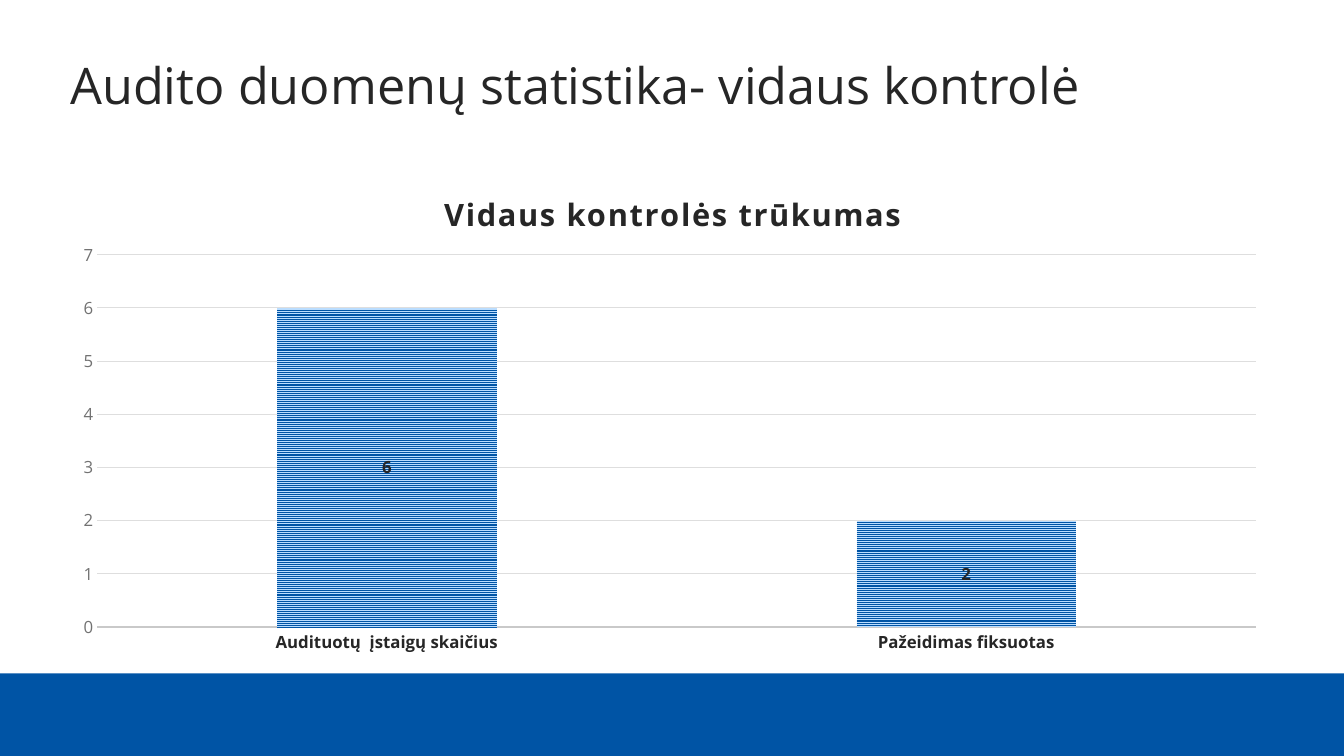
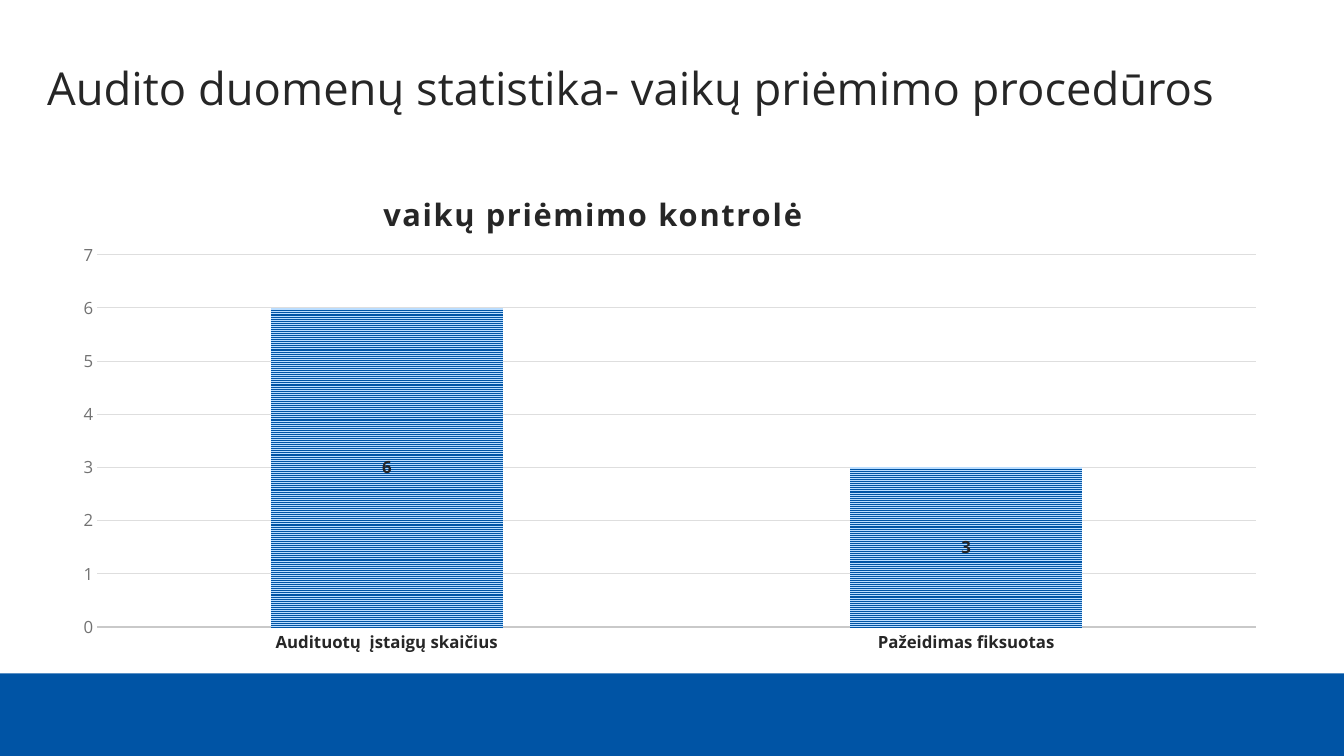
"""Builds two audit slides, each with a title, a column chart and a blue band."""
from dataclasses import dataclass

import pptx
import pptx.chart.data
import pptx.dml.color
import pptx.enum.chart
import pptx.enum.dml
import pptx.enum.shapes
import pptx.enum.text
import pptx.oxml
import pptx.oxml.ns
import pptx.util

Inches = pptx.util.Inches
Pt = pptx.util.Pt
Kind = pptx.enum.chart.XL_CHART_TYPE


@dataclass(frozen=True)
class Theme:
    """Holds colours, font and type sizes."""
    face: str = "Open Sans"
    ink: str = "262626"
    grey: str = "727272"
    grid: str = "DEDEDE"
    base: str = "C9C9C9"
    blue: str = "0054A5"
    pale: str = "BADDFF"
    head: float = 22
    label: float = 12
    body: float = 10
    spread: int = 130


class Deck:
    """Holds the style and the current slide."""

    def __init__(self, theme):
        self.theme = theme
        self.show = pptx.Presentation()
        self.show.slide_width = Inches(13.33)
        self.show.slide_height = Inches(7.5)
        self.slide = None

    def tint(self, code):
        """Turns a hex code into a colour."""
        return pptx.dml.color.RGBColor.from_string(code)

    def style(self, font, size, code, bold=False):
        """Sets face, size, colour and weight."""
        font.name = self.theme.face
        font.size = Pt(size)
        font.bold = bold
        font.color.rgb = self.tint(code)

    def stroke(self, line, code, width):
        """Sets the colour and width of a line."""
        line.color.rgb = self.tint(code)
        line.width = Pt(width)

    def place(self, host, index, **parts):
        """Gives a chart part a fixed layout."""
        for old in host.findall(pptx.oxml.ns.qn("c:layout")):
            host.remove(old)
        inner = '<c:layoutTarget val="inner"/>' if "w" in parts else ""
        modes = "".join(f'<c:{key}Mode val="edge"/>' for key in "xy")
        sizes = "".join(f'<c:{key} val="{val}"/>' for key, val in parts.items())
        host.insert(index, pptx.oxml.parse_xml(
            f'<c:layout {pptx.oxml.ns.nsdecls("c")}><c:manualLayout>'
            f'{inner}{modes}{sizes}</c:manualLayout></c:layout>'))

    def start(self):
        """Adds a blank slide with the band."""
        self.slide = self.show.slides.add_slide(self.show.slide_layouts[6])
        band = self.slide.shapes.add_shape(
            pptx.enum.shapes.MSO_SHAPE.RECTANGLE,
            0, Inches(6.68), self.show.slide_width, Inches(0.82))
        band.shadow.inherit = False
        band.fill.solid()
        band.fill.fore_color.rgb = self.tint(self.theme.blue)
        band.line.fill.background()

    def title(self, text, left, width, size):
        """Adds the slide title."""
        box = self.slide.shapes.add_textbox(
            Inches(left), Inches(0.3), Inches(width), Inches(0.89))
        frame = box.text_frame
        frame.word_wrap = True
        frame.vertical_anchor = pptx.enum.text.MSO_ANCHOR.BOTTOM
        frame.text = text
        line = frame.paragraphs[0]
        line.line_spacing = 0.9
        self.style(line.runs[0].font, size, self.theme.ink)

    def chart(self, kind, head, shift, vals, gap, lap):
        """Adds a column chart with its heading."""
        data = pptx.chart.data.CategoryChartData()
        data.categories = ["Audituotų  įstaigų skaičius", "Pažeidimas fiksuotas"]
        data.add_series("Series 1", vals)
        chart = self.slide.shapes.add_chart(
            kind, Inches(0.6), Inches(1.58), Inches(12.1), Inches(4.99), data).chart
        self.style(chart.font, self.theme.body, self.theme.ink)
        chart.has_legend = False
        self.heading(chart, head, shift)
        self.axes(chart)
        self.bars(chart.plots[0], gap, lap)
        area = chart.plots[0]._element.getparent()
        self.place(area, 0, x=0.03, y=0.19, w=0.95, h=0.74)

    def heading(self, chart, text, shift):
        """Sets the chart heading."""
        chart.has_title = True
        frame = chart.chart_title.text_frame
        frame.text = text
        run = frame.paragraphs[0].runs[0]
        self.style(run.font, self.theme.head, self.theme.ink, True)
        run._r.get_or_add_rPr().set("spc", str(self.theme.spread))
        self.place(chart.chart_title._element, 1, x=shift, y=0.05)

    def axes(self, chart):
        """Styles both axes and the grid."""
        theme = self.theme
        none = pptx.enum.chart.XL_TICK_MARK.NONE
        cat, val = chart.category_axis, chart.value_axis
        for axis in (cat, val):
            axis.major_tick_mark = axis.minor_tick_mark = none
        self.style(cat.tick_labels.font, theme.label, theme.ink, True)
        self.stroke(cat.format.line, theme.base, 1.5)
        self.style(val.tick_labels.font, theme.label, theme.grey)
        val.format.line.fill.background()
        val.minimum_scale, val.maximum_scale, val.major_unit = 0, 7, 1
        self.stroke(val.major_gridlines.format.line, theme.grid, 0.75)

    def bars(self, plot, gap, lap):
        """Styles the columns and their labels."""
        plot.gap_width, plot.overlap = gap, lap
        plot.vary_by_categories = False
        fill = plot.series[0].format.fill
        fill.patterned()
        fill.pattern = pptx.enum.dml.MSO_PATTERN.NARROW_HORIZONTAL
        fill.fore_color.rgb = self.tint(self.theme.blue)
        fill.back_color.rgb = self.tint(self.theme.pale)
        tags = plot.series[0].data_labels
        tags.show_value = True
        tags.position = pptx.enum.chart.XL_LABEL_POSITION.CENTER
        self.style(tags.font, self.theme.label, self.theme.ink, True)


def main():
    """Builds and saves the slides."""
    deck = Deck(Theme())
    deck.start()
    deck.title("Audito duomenų statistika- vidaus kontrolė", 0.6, 12.1, 36)
    deck.chart(Kind.COLUMN_CLUSTERED, "Vidaus kontrolės trūkumas", 0.31, (6, 2), 164, -22)
    deck.start()
    deck.title("Audito duomenų statistika- vaikų priėmimo procedūros", 0.37, 12.61, 32.4)
    deck.chart(Kind.COLUMN_STACKED, "vaikų priėmimo kontrolė", 0.26, (6, 3), 150, 100)
    deck.show.save("out.pptx")


if __name__ == "__main__":
    main()
